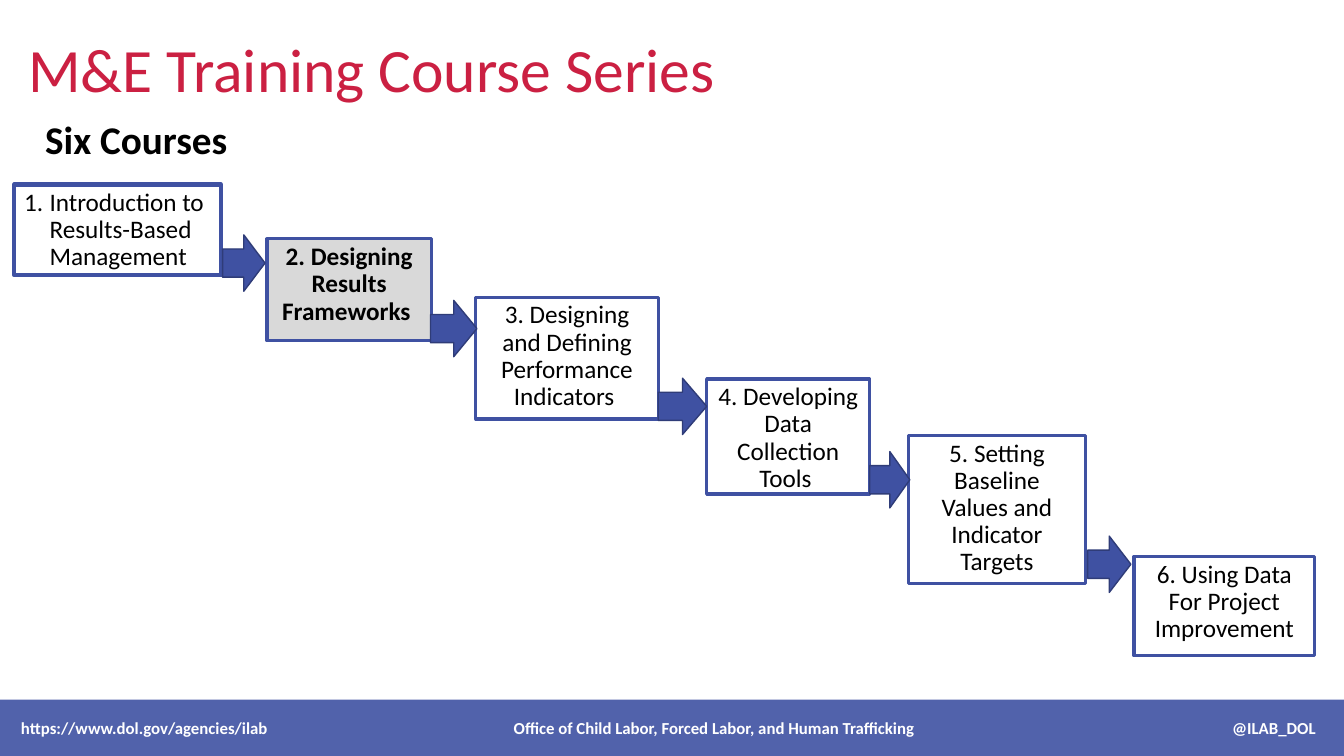
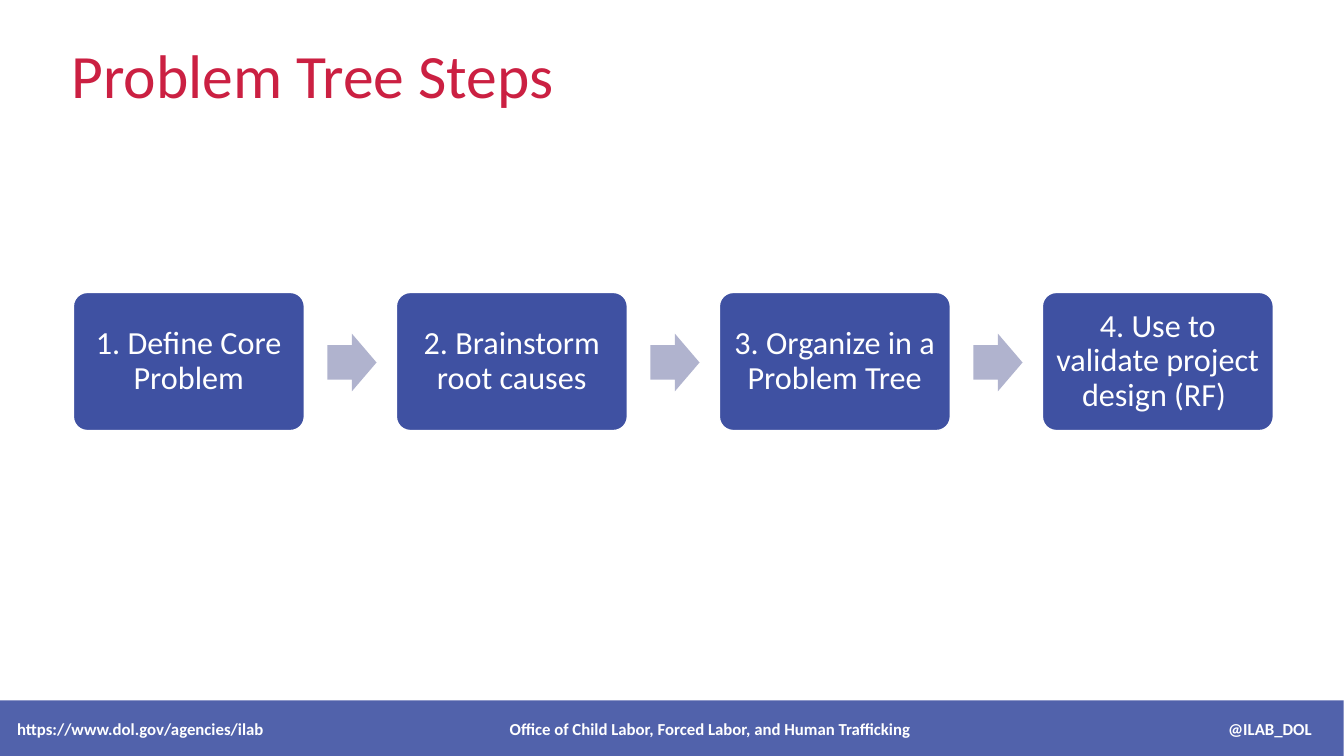
import pptx
import pptx.util
import pptx.dml.color
import pptx.enum.shapes
import pptx.enum.text
import pptx.oxml.ns
import lxml.etree

Cm = pptx.util.Cm
Pt = pptx.util.Pt
SHAPE = pptx.enum.shapes.MSO_SHAPE
ALIGN = pptx.enum.text.PP_ALIGN
ANCHOR = pptx.enum.text.MSO_ANCHOR

FONT = "Calibri"
COLOURS = {
    "blue": "3F51A2",
    "dark blue": "2F3C78",
    "pale blue": "B0B3CE",
    "red": "CB2042",
    "grey": "D9D9D9",
    "white": "FFFFFF",
    "black": "000000",
}
FOOTER = (
    "https://www.dol.gov/agencies/ilab",
    "Office of Child Labor, Forced Labor, and Human Trafficking",
    "@ILAB_DOL",
)

# Text, box (left, top, width, height) in cm
COURSES = [
    ("Introduction to Results-Based Management", (0.36, 4.65, 5.21, 2.29)),
    ("2. Designing Results Frameworks ", (6.73, 6.02, 4.14, 2.57)),
    ("3. Designing and Defining Performance Indicators ", (11.99, 7.49, 4.6, 3.07)),
    ("4. Developing Data Collection Tools ", (17.81, 9.55, 4.11, 2.9)),
    ("5. Setting Baseline Values and Indicator Targets", (22.89, 10.97, 4.47, 3.73)),
    ("6. Using Data For Project Improvement", (28.58, 14.02, 4.55, 2.51)),
]
CURRENT_COURSE = 2
# Left, top, width in cm
COURSE_ARROWS = [
    (5.61, 5.92, 1.07),
    (10.85, 7.57, 1.17),
    (16.59, 9.53, 1.22),
    (21.92, 11.38, 1.01),
    (27.41, 13.51, 1.09),
]
STEPS = [
    "1. Define Core Problem",
    "2. Brainstorm root causes",
    "3. Organize in a Problem Tree",
    "4. Use to validate project design (RF) ",
]


def colour(name):
    return pptx.dml.color.RGBColor.from_string(COLOURS[name])


def set_values(target, values):
    for name, value in values.items():
        setattr(target, name, value)


def add_xml(parent, tag, **attributes):
    return lxml.etree.SubElement(parent, pptx.oxml.ns.qn(tag), attributes)


def write(shape, text, size, ink, bold=False, align=ALIGN.LEFT,
          anchor=ANCHOR.TOP, spacing=0.9, wrap=True):
    """Fill a shape with one formatted paragraph and return it."""
    set_values(shape.text_frame, {
        "auto_size": pptx.enum.text.MSO_AUTO_SIZE.NONE,
        "word_wrap": wrap,
        "vertical_anchor": anchor,
    })
    para = shape.text_frame.paragraphs[0]
    set_values(para, {"alignment": align, "line_spacing": spacing})
    span = para.add_run()
    span.text = text
    set_values(span.font, {"name": FONT, "size": Pt(size), "bold": bold})
    span.font.color.rgb = colour(ink)
    return para


def add_shape(page, kind, place, fill, line=None, line_width=1):
    shape = page.shapes.add_shape(kind, *map(Cm, place))
    shape.shadow.inherit = False
    shape.fill.solid()
    shape.fill.fore_color.rgb = colour(fill)
    if line:
        shape.line.color.rgb = colour(line)
        shape.line.width = Pt(line_width)
    else:
        shape.line.fill.background()
    return shape


def add_footer(page, left, top):
    """Translucent band with left, centred and right-hand text."""
    band = add_shape(page, SHAPE.RECTANGLE, (left, top, 33.96, 1.42), "blue")
    solid = band.fill._xPr.find(pptx.oxml.ns.qn("a:solidFill"))
    add_xml(solid[0], "a:alpha", val="90000")
    para = write(band, "\t".join(FOOTER), 12, "white", bold=True,
                 anchor=ANCHOR.MIDDLE, spacing=1.0)
    band.text_frame.margin_left = Cm(0.53)
    tabs = add_xml(para._p.get_or_add_pPr(), "a:tabLst")
    for position, side in ((17.47, "ctr"), (32.63, "r")):
        add_xml(tabs, "a:tab", pos=str(int(Cm(position))), algn=side)


def add_page(deck, title, title_place, footer_place):
    page = deck.slides.add_slide(deck.slide_layouts[5])
    box = page.shapes.title
    set_values(box, dict(zip(("left", "top", "width", "height"),
                             map(Cm, title_place))))
    write(box, title, 44, "red", anchor=ANCHOR.MIDDLE)
    add_footer(page, *footer_place)
    return page


def add_course(page, number, text, place):
    first = number == 1
    current = number == CURRENT_COURSE
    box = add_shape(page, SHAPE.RECTANGLE, place, "grey" if current else "white",
                    "blue", 3 if first else 2.25)
    para = write(box, text, 18, "black", bold=current,
                 align=ALIGN.LEFT if first else ALIGN.CENTER)
    if first:
        # Automatic number with a hanging indent
        properties = para._p.get_or_add_pPr()
        indent = int(Cm(0.64))
        properties.set("marL", str(indent))
        properties.set("indent", str(-indent))
        add_xml(properties, "a:buFont", typeface="+mj-lt")
        add_xml(properties, "a:buAutoNum", type="arabicPeriod")


def add_step(page, text, left):
    box = add_shape(page, SHAPE.ROUNDED_RECTANGLE, (left, 7.37, 5.82, 3.48),
                    "blue", "white")
    box.adjustments[0] = 0.1
    write(box, text, 23, "white", align=ALIGN.CENTER, anchor=ANCHOR.MIDDLE)
    # The rounded corners already inset the text a little
    sides = ("left", "right", "top", "bottom")
    set_values(box.text_frame, {"margin_" + side: Cm(0.2) for side in sides})


def build_courses(deck):
    page = add_page(deck, "M&E Training Course Series",
                    (0.46, 0, 29.21, 3.68), (0, 17.63))
    heading = page.shapes.add_textbox(*map(Cm, (0.89, 2.79, 5.16, 1.45)))
    write(heading, "Six Courses", 28, "black", bold=True, spacing=1.0, wrap=False)
    for number, (text, place) in enumerate(COURSES, start=1):
        add_course(page, number, text, place)
    for left, top, width in COURSE_ARROWS:
        add_shape(page, SHAPE.RIGHT_ARROW, (left, top, width, 1.42),
                  "blue", "dark blue")


def build_steps(deck):
    page = add_page(deck, "Problem Tree Steps",
                    (1.55, 0.53, 26.16, 2.92), (-0.1, 17.65))
    first_left, pitch, arrow_offset = 1.85, 8.14, 6.4
    for index, text in enumerate(STEPS):
        left = first_left + index * pitch
        add_step(page, text, left)
        if index < len(STEPS) - 1:
            arrow = add_shape(page, SHAPE.RIGHT_ARROW,
                              (left + arrow_offset, 8.41, 1.24, 1.45), "pale blue")
            arrow.adjustments[0] = 0.6


def main():
    deck = pptx.Presentation()
    set_values(deck, {"slide_width": Cm(33.87), "slide_height": Cm(19.05)})
    build_courses(deck)
    build_steps(deck)
    deck.save("out.pptx")


if __name__ == "__main__":
    main()
